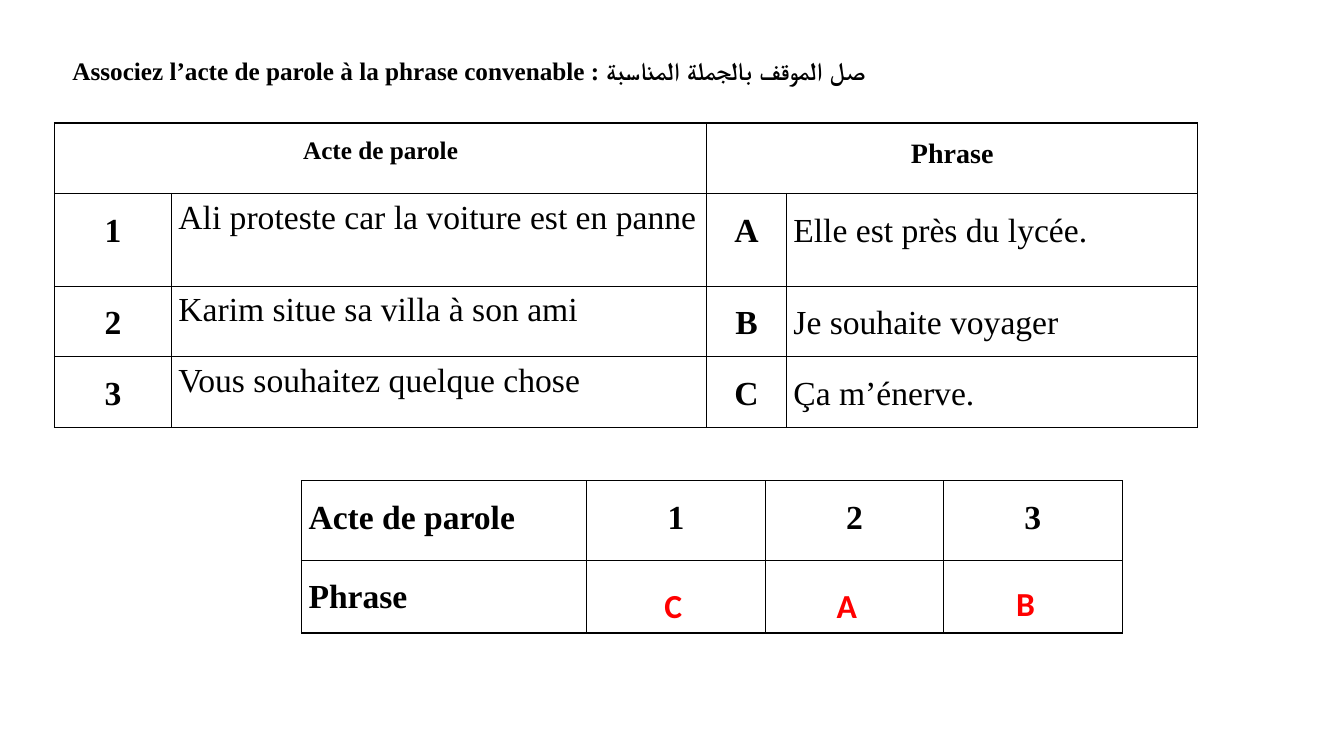
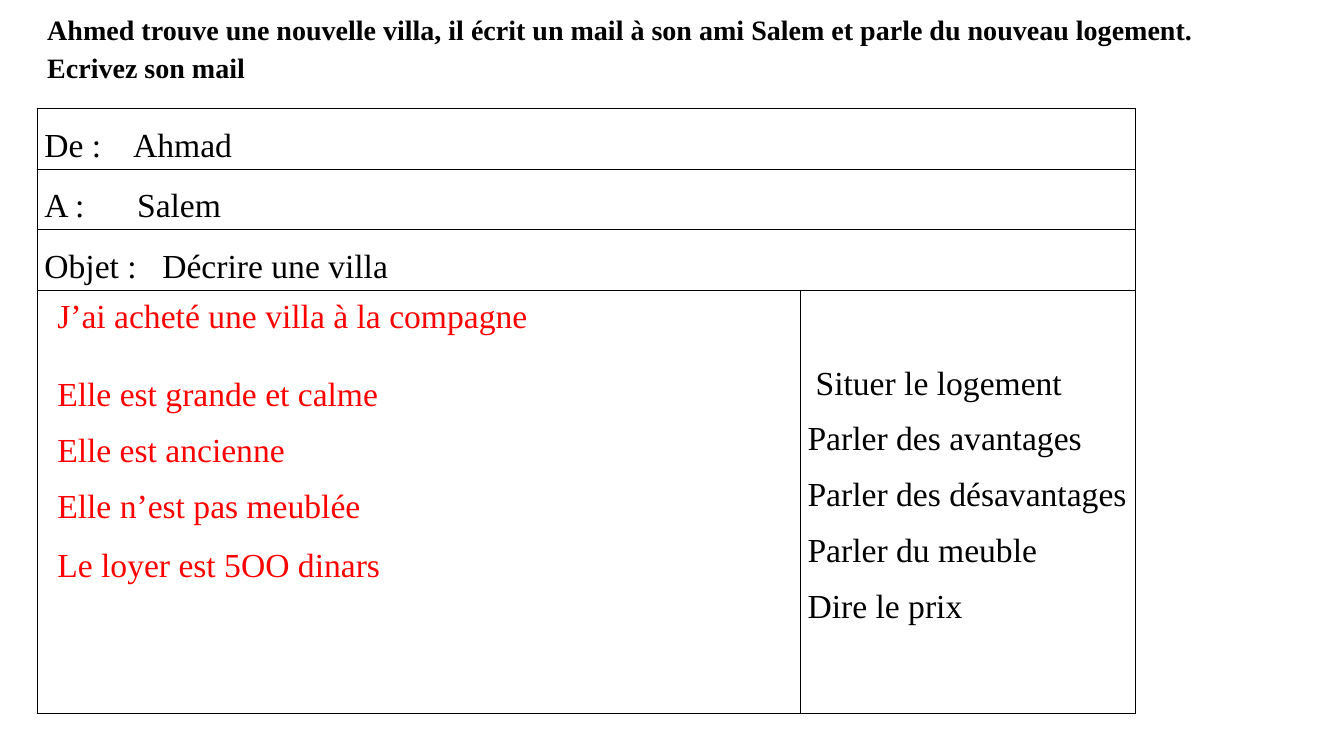
from dataclasses import dataclass
from typing import Optional

from lxml.etree import SubElement
from pptx import Presentation
from pptx.dml.color import RGBColor
from pptx.enum.text import MSO_AUTO_SIZE as AutoSize, PP_ALIGN as Align
from pptx.oxml import parse_xml
from pptx.oxml.ns import nsdecls, qn
from pptx.util import Inches, Pt

BLACK, RED = "000000", "FF0000"
SERIF, SANS = "Times New Roman", "Calibri"
CELL_MARGIN = 0.07


@dataclass(frozen=True)
class Line:
    text: str
    size: int = 24
    bold: bool = False
    color: str = BLACK
    font: str = SERIF
    align: Align = Align.LEFT
    spacing: float = 1.5
    indent: float = 0
    tab: Optional[float] = None


@dataclass(frozen=True)
class Cell:
    lines: tuple[Line, ...] = ()
    span: int = 1
    margin_top: float = 0


@dataclass(frozen=True)
class Box:
    left: float
    top: float
    width: float
    height: float
    lines: tuple[Line, ...]


def rgb(color: str) -> RGBColor:
    return RGBColor.from_string(color)


def write_lines(frame, lines: tuple[Line, ...]) -> None:
    for index, line in enumerate(lines):
        paragraph = frame.add_paragraph() if index else frame.paragraphs[0]
        paragraph.alignment = line.align
        paragraph.line_spacing = line.spacing
        properties = paragraph._p.get_or_add_pPr()
        if line.indent:
            properties.set("marL", str(Inches(line.indent)))
            properties.set("indent", "0")
        if line.tab is not None:
            stops = SubElement(properties, qn("a:tabLst"))
            SubElement(stops, qn("a:tab"), pos=str(Inches(line.tab)), algn="l")
        run = paragraph.add_run()
        run.text = line.text
        run.font.name = line.font
        run.font.size = Pt(line.size)
        run.font.bold = line.bold
        run.font.color.rgb = rgb(line.color)


def add_text(slide, box: Box) -> None:
    shape = slide.shapes.add_textbox(
        Inches(box.left), Inches(box.top), Inches(box.width), Inches(box.height))
    shape.text_frame.word_wrap = True
    shape.text_frame.auto_size = AutoSize.NONE
    write_lines(shape.text_frame, box.lines)


def add_borders(cell) -> None:
    properties = cell._tc.get_or_add_tcPr()
    for index, side in enumerate("LRTB"):
        properties.insert(index, parse_xml(
            f'<a:ln{side} {nsdecls("a")} w="{Pt(1)}"><a:solidFill>'
            f'<a:srgbClr val="{BLACK}"/></a:solidFill></a:ln{side}>'))


def add_grid(slide, left: float, top: float, columns: list[float],
             heights: list[float], rows: list[list[Cell]]) -> None:
    table = slide.shapes.add_table(
        len(heights), len(columns), Inches(left), Inches(top),
        Inches(sum(columns)), Inches(sum(heights))).table
    table.first_row = table.horz_banding = False
    for column, width in zip(table.columns, columns):
        column.width = Inches(width)
    for row, height in zip(table.rows, heights):
        row.height = Inches(height)
    for cell in table.iter_cells():
        cell.fill.background()
        add_borders(cell)
        cell.margin_left = cell.margin_right = Inches(CELL_MARGIN)
        cell.margin_top = cell.margin_bottom = 0
    for row_index, row in enumerate(rows):
        column_index = 0
        for content in row:
            cell = table.cell(row_index, column_index)
            if content.span > 1:
                cell.merge(table.cell(row_index, column_index + content.span - 1))
            cell.margin_top = Inches(content.margin_top)
            write_lines(cell.text_frame, content.lines)
            column_index += content.span


def label(text: str, size: int = 24, span: int = 1, align: Align = Align.CENTER) -> Cell:
    return Cell((Line(text, size, bold=True, align=align),), span)


def build_matching(slide) -> None:
    # Instruction
    add_text(slide, Box(0.12, 0.35, 12.62, 0.5, (
        Line("Associez l’acte de parole à la phrase convenable : صل الموقف بالجملة المناسبة",
             18, bold=True, indent=0.5),)))

    # Speech acts and sentences
    pairs = [
        ("1", "Ali proteste car la voiture est en panne", "A", "Elle est près du lycée."),
        ("2", "Karim situe sa villa à son ami", "B", "Je souhaite voyager"),
        ("3", "Vous souhaitez quelque chose", "C", "Ça m’énerve."),
    ]
    header = [label("Acte de parole", 18, span=2), label("Phrase", 20, span=2)]
    add_grid(slide, 0.54, 1.22, [1.16, 5.31, 0.79, 4.08], [0.7, 0.92, 0.7, 0.7],
             [header] + [
                 [label(number), Cell((Line(act, spacing=1.15),)),
                  label(letter), Cell((Line(sentence, align=Align.JUSTIFY),))]
                 for number, act, letter, sentence in pairs])

    # Answer grid
    add_grid(slide, 2.99, 4.77, [2.83] + [1.77] * 3, [0.79, 0.72], [
        [label("Acte de parole", align=Align.LEFT)] + [label(pair[0]) for pair in pairs],
        [label("Phrase", align=Align.LEFT)],
    ])

    # Answers
    for letter, left, top, width in (
            ("C", 6.49, 5.75, 0.36), ("A", 8.2, 5.75, 0.43), ("B", 9.98, 5.73, 0.43)):
        add_text(slide, Box(left, top, width, 0.5, (
            Line(letter, bold=True, color=RED, font=SANS, spacing=1),)))


def build_mail(slide) -> None:
    # Model sentences
    for sentence, top, width, height in (
            ("J’ai acheté une villa à la compagne", 2.68, 4.99, 1.11),
            ("Elle est grande et calme", 3.45, 3.49, 1.11),
            ("Elle est ancienne", 4.01, 2.56, 1.11),
            ("Elle n’est pas meublée", 4.56, 3.32, 1.11),
            ("Le loyer est 5OO dinars", 5.15, 3.49, 0.63)):
        add_text(slide, Box(0.47, top, width, height, (Line(sentence, color=RED),)))

    # Instruction
    instruction = (
        "Ahmed trouve une nouvelle villa, il écrit un mail à son ami Salem "
        "et parle du nouveau logement.",
        "Ecrivez son mail")
    add_text(slide, Box(0.37, 0.02, 12.12, 0.84, tuple(
        Line(text, 20, bold=True, spacing=1.15) for text in instruction)))

    # Mail form with its outline
    fields = (("De :\tAhmad", 0.88), ("A :\tSalem", 0.92),
              ("Objet :\tDécrire une villa", 1.17))
    outline = (Line("Situer le logement", indent=0.08),) + tuple(
        Line(text) for text in ("Parler des avantages", "Parler des désavantages",
                                "Parler du meuble", "Dire le prix"))
    add_grid(slide, 0.37, 1.08, [7.57, 3.32], [0.6] * 3 + [4.2],
             [[Cell((Line(text, tab=tab),), span=2)] for text, tab in fields]
             + [[Cell(), Cell(outline, margin_top=0.56)]])


def main() -> None:
    presentation = Presentation()
    presentation.slide_width = Inches(13.33)
    presentation.slide_height = Inches(7.5)
    blank = presentation.slide_layouts[6]
    for build in (build_matching, build_mail):
        build(presentation.slides.add_slide(blank))
    presentation.save("out.pptx")


if __name__ == "__main__":
    main()
